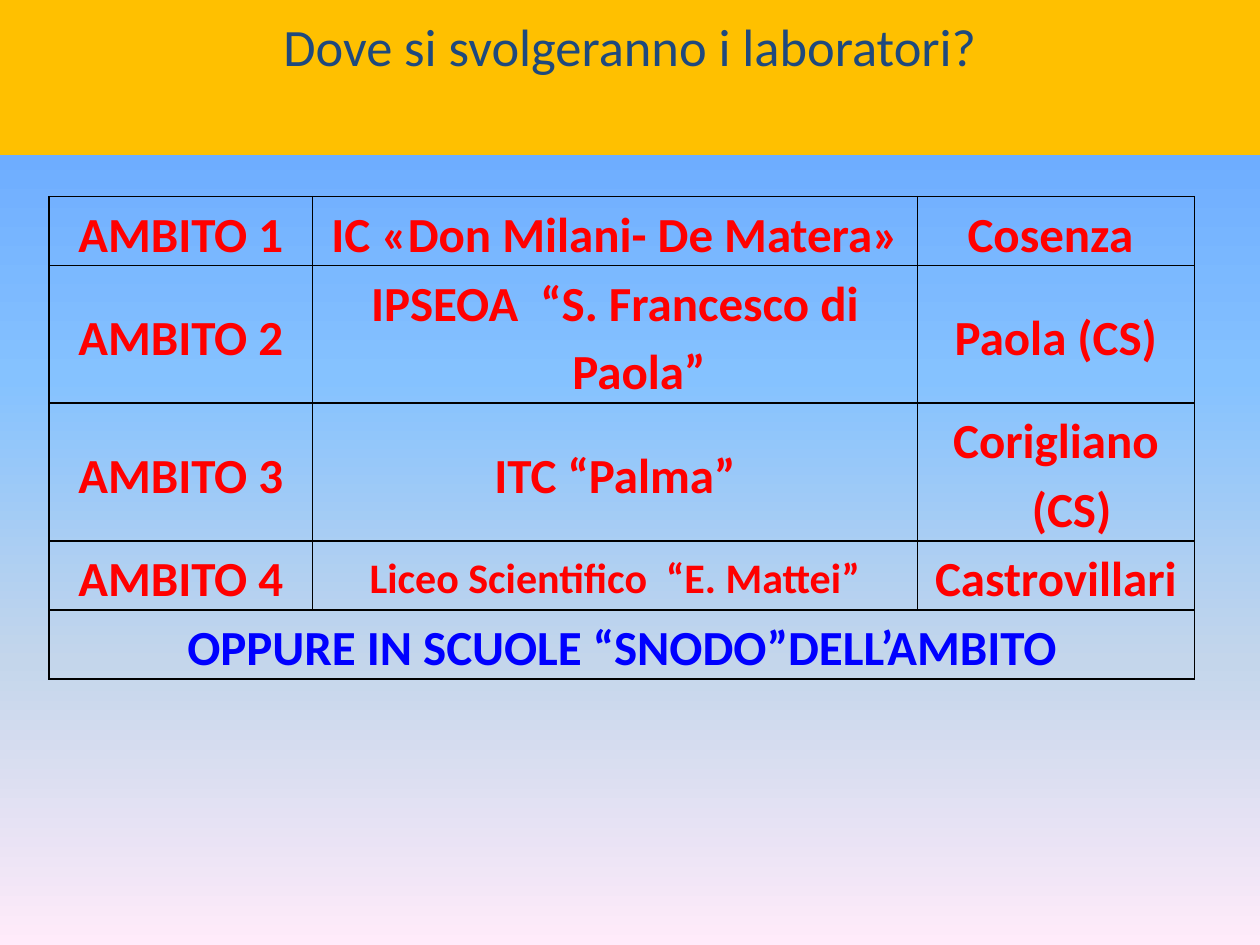
"""Build the slide that lists where the workshops take place."""
from lxml import etree
from pptx import Presentation
from pptx.dml.color import RGBColor
from pptx.enum.text import MSO_ANCHOR, MSO_AUTO_SIZE, PP_ALIGN
from pptx.oxml.ns import qn
from pptx.util import Inches, Pt

CENTER = PP_ALIGN.CENTER
TOP = MSO_ANCHOR.TOP
MIDDLE = MSO_ANCHOR.MIDDLE
NO_AUTOFIT = MSO_AUTO_SIZE.NONE
TITLE_ONLY = 5

COLORS = {
    "banner": "FFC000",
    "title": "1F497D",
    "venue": "FF0000",
    "alternative": "0000FF",
    "border": "000000",
}
SKY_STOPS = [(0, "5E9EFF"), (40, "85C2FF"), (70, "C4D6EB"), (100, "FFEBFA")]
COLUMN_WIDTHS = [2.09, 4.8, 2.2]
ROW_HEIGHTS = [0.54, 1.07, 1.07, 0.54, 0.54]
HANGING_INDENTS = [0.38, 0.38, 0.25]
VENUES = [
    ["AMBITO 1", "IC «Don Milani- De Matera»", "Cosenza "],
    ["AMBITO 2", "IPSEOA  “S. Francesco di Paola”", "Paola (CS)"],
    ["AMBITO 3", "ITC “Palma”", "Corigliano (CS)"],
    ["AMBITO 4", "Liceo Scientifico  “E. Mattei”", "Castrovillari"],
]
SMALLER_CELL = (3, 1)
ALTERNATIVE = "OPPURE IN SCUOLE “SNODO”DELL’AMBITO"


class SlideBuilder:
    """Hold the text style and the current slide."""

    font = "Calibri"

    def __init__(self, presentation):
        self.slide = presentation.slides.add_slide(presentation.slide_layouts[TITLE_ONLY])

    def background(self, stops):
        """Fill the background with a gradient running downwards."""
        fill = self.slide.background.fill
        fill.gradient()
        fill.gradient_angle = 270
        stop_list = next(self.slide.background._cSld.iter(qn("a:gsLst")))
        for stop in list(stop_list):
            stop_list.remove(stop)
        for percent, color in stops:
            stop = etree.SubElement(stop_list, qn("a:gs"), pos=str(percent * 1000))
            etree.SubElement(stop, qn("a:srgbClr"), val=color)

    def run(self, paragraph, text, size, color, bold=False):
        """Add one styled run to a centred paragraph."""
        paragraph.alignment = CENTER
        run = paragraph.add_run()
        run.text = text
        run.font.name = self.font
        run.font.size = Pt(size)
        run.font.bold = bold
        run.font.color.rgb = RGBColor.from_string(COLORS[color])

    def title(self, text, width, height):
        """Turn the title placeholder into a banner across the top."""
        shape = self.slide.shapes.title
        shape.left, shape.top = Inches(0), Inches(0)
        shape.width, shape.height = Inches(width), Inches(height)
        shape.fill.solid()
        shape.fill.fore_color.rgb = RGBColor.from_string(COLORS["banner"])
        frame = shape.text_frame
        frame.auto_size = NO_AUTOFIT
        frame.vertical_anchor = TOP
        frame.margin_top = Inches(0.11)
        self.run(frame.paragraphs[0], text, 30, "title")

    def table(self, left, top, widths, heights):
        """Add a plain table with bordered, unfilled cells."""
        table = self.slide.shapes.add_table(
            len(heights), len(widths), Inches(left), Inches(top),
            Inches(sum(widths)), Inches(sum(heights))).table
        table.first_row = table.horz_banding = False
        for column, width in zip(table.columns, widths):
            column.width = Inches(width)
        for row, height in zip(table.rows, heights):
            row.height = Inches(height)
        for cell in table.iter_cells():
            cell.fill.background()
            self.borders(cell)
        return table

    def borders(self, cell):
        """Draw a thin line on all four sides of a cell."""
        properties = cell._tc.get_or_add_tcPr()
        for position, side in enumerate(("a:lnL", "a:lnR", "a:lnT", "a:lnB")):
            line = etree.Element(qn(side), w=str(Pt(1)))
            fill = etree.SubElement(line, qn("a:solidFill"))
            etree.SubElement(fill, qn("a:srgbClr"), val=COLORS["border"])
            properties.insert(position, line)

    def cell(self, cell, text, indent, color="venue", size=28):
        """Write bold text with a hanging indent into a cell."""
        cell.vertical_anchor = MIDDLE
        cell.margin_left = cell.margin_right = Inches(0.07)
        cell.margin_top = cell.margin_bottom = Inches(0)
        paragraph = cell.text_frame.paragraphs[0]
        paragraph.line_spacing = 1.15
        properties = paragraph._p.get_or_add_pPr()
        properties.set("marL", str(Inches(indent)))
        properties.set("indent", str(-Inches(indent)))
        self.run(paragraph, text, size, color, bold=True)


def main():
    """Create and save the presentation."""
    presentation = Presentation()
    presentation.slide_width, presentation.slide_height = Inches(10), Inches(7.5)
    builder = SlideBuilder(presentation)
    builder.background(SKY_STOPS)
    builder.title("Dove si svolgeranno i laboratori?", 10, 1.23)
    table = builder.table(0.39, 1.56, COLUMN_WIDTHS, ROW_HEIGHTS)
    for row, venue in enumerate(VENUES):
        for column, text in enumerate(venue):
            size = 24 if (row, column) == SMALLER_CELL else 28
            builder.cell(table.cell(row, column), text, HANGING_INDENTS[column], size=size)
    last_row = len(VENUES)
    alternative = table.cell(last_row, 0)
    alternative.merge(table.cell(last_row, len(COLUMN_WIDTHS) - 1))
    builder.cell(alternative, ALTERNATIVE, HANGING_INDENTS[0], color="alternative")
    presentation.save("out.pptx")


if __name__ == "__main__":
    main()
